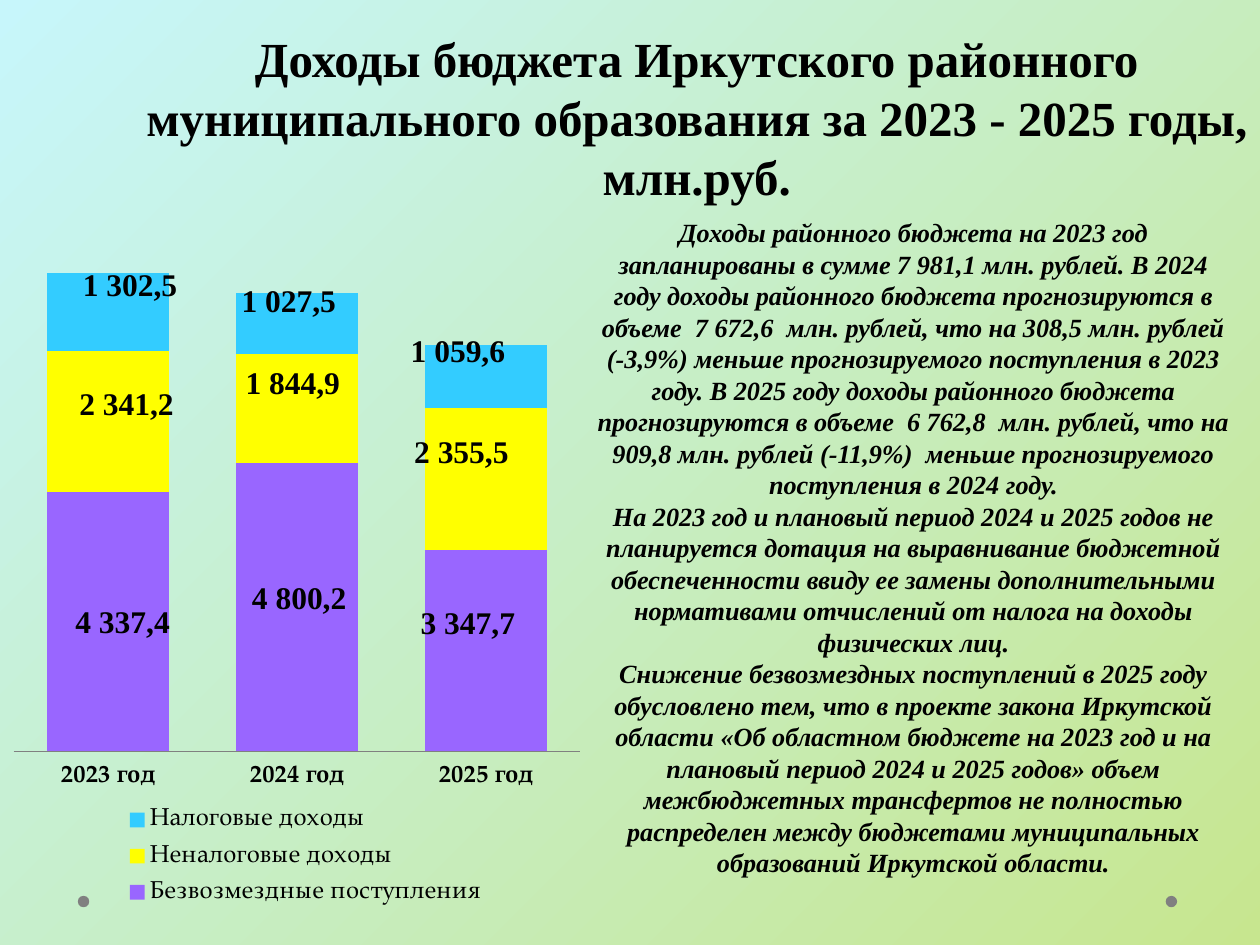
"""Build a slide on district budget revenues with a stacked column chart."""
from lxml.etree import SubElement
from pptx import Presentation
from pptx.chart.data import CategoryChartData
from pptx.dml.color import RGBColor
from pptx.enum.chart import XL_CHART_TYPE, XL_LEGEND_POSITION, XL_TICK_LABEL_POSITION, XL_TICK_MARK
from pptx.enum.shapes import MSO_SHAPE
from pptx.enum.text import MSO_ANCHOR, PP_ALIGN
from pptx.oxml.ns import qn
from pptx.util import Cm, Pt

BLACK = RGBColor(0x00, 0x00, 0x00)
GRAY = RGBColor(0x80, 0x80, 0x80)
PURPLE = RGBColor(0x99, 0x66, 0xFF)
YELLOW = RGBColor(0xFF, 0xFF, 0x00)
BLUE = RGBColor(0x33, 0xCC, 0xFF)
BACKGROUND = [RGBColor(0xC7, 0xF6, 0xFB), RGBColor(0xC7, 0xE6, 0x8F)]
TEXT_FONT = "Times New Roman"
CHART_FONT = "TeX Gyre Pagella"

TITLE = "Доходы бюджета Иркутского районного муниципального образования за 2023 - 2025 годы, млн.руб."
COMMENTS = [
    "Доходы районного бюджета на 2023 год запланированы в сумме 7 981,1 млн. рублей. "
    "В 2024 году доходы районного бюджета прогнозируются в объеме  7 672,6  млн. рублей, "
    "что на 308,5 млн. рублей (-3,9%) меньше прогнозируемого поступления в 2023 году. "
    "В 2025 году доходы районного бюджета прогнозируются в объеме  6 762,8  млн. рублей, "
    "что на 909,8 млн. рублей (-11,9%)  меньше прогнозируемого поступления в 2024 году.",
    "На 2023 год и плановый период 2024 и 2025 годов не планируется дотация на выравнивание "
    "бюджетной обеспеченности ввиду ее замены дополнительными нормативами отчислений "
    "от налога на доходы физических лиц.",
    "Снижение безвозмездных поступлений в 2025 году обусловлено тем, что в проекте закона "
    "Иркутской области «Об областном бюджете на 2023 год и на плановый период 2024 и 2025 годов» "
    "объем межбюджетных трансфертов не полностью распределен между бюджетами муниципальных "
    "образований Иркутской области.",
]
YEARS = ["2023 год", "2024 год", "2025 год"]
SERIES = [
    ("Безвозмездные поступления", (90, 100, 70), PURPLE),
    ("Неналоговые доходы", (49, 38, 49), YELLOW),
    ("Налоговые доходы", (27, 21, 22), BLUE),
]
AMOUNTS = [
    ("4 337,4", 1.27, 12.01), ("4 800,2", 4.83, 11.53), ("3 347,7", 8.23, 12.04),
    ("2 341,2", 1.35, 7.62), ("1 844,9", 4.7, 7.19), ("2 355,5", 8.1, 8.59),
    ("1 302,5", 1.42, 5.21), ("1 027,5", 4.62, 5.54), ("1 059,6", 8.03, 6.55),
]
DOT_LEFTS = (1.57, 23.5)


def set_font(font, name, size, bold=False, italic=False):
    font.name, font.size, font.bold, font.italic = name, Pt(size), bold, italic
    font.color.rgb = BLACK


def add_text(slide, box, paragraphs, size, align=PP_ALIGN.LEFT, anchor=MSO_ANCHOR.TOP, italic=False):
    text_frame = slide.shapes.add_textbox(*map(Cm, box)).text_frame
    text_frame.word_wrap = True
    text_frame.vertical_anchor = anchor
    text_frame.text = "\n".join(paragraphs)
    for paragraph in text_frame.paragraphs:
        paragraph.alignment = align
        for run in paragraph.runs:
            set_font(run.font, TEXT_FONT, size, True, italic)


def set_layout(parent, position, inner=False):
    for old_layout in parent.findall(qn("c:layout")):
        parent.remove(old_layout)
    layout = SubElement(parent, qn("c:layout"))
    manual = SubElement(layout, qn("c:manualLayout"))
    settings = [("layoutTarget", "inner")] if inner else []
    settings += [("xMode", "edge"), ("yMode", "edge"), *zip("xywh", position)]
    for name, value in settings:
        SubElement(manual, qn(f"c:{name}")).set("val", str(value))
    return layout


def add_revenue_chart(slide):
    data = CategoryChartData()
    data.categories = YEARS
    for name, values, _ in SERIES:
        data.add_series(name, values)
    box = map(Cm, (-0.08, 3.53, 11.79, 15.09))
    chart = slide.shapes.add_chart(XL_CHART_TYPE.COLUMN_STACKED, *box, data).chart
    set_font(chart.font, CHART_FONT, 10)
    chart.has_title = False

    plot = chart.plots[0]
    plot.gap_width, plot.overlap, plot.vary_by_categories = 55, 100, False
    for series, (_, _, color) in zip(plot.series, SERIES):
        series.format.fill.solid()
        series.format.fill.fore_color.rgb = color

    axis = chart.category_axis
    axis.major_tick_mark = XL_TICK_MARK.NONE
    axis.tick_label_position = XL_TICK_LABEL_POSITION.LOW
    axis.format.line.color.rgb = GRAY
    set_font(axis.tick_labels.font, CHART_FONT, 14, True)
    chart.value_axis.visible = False
    chart.value_axis.has_major_gridlines = False
    chart.value_axis.minimum_scale, chart.value_axis.maximum_scale = 0, 187

    chart.has_legend = True
    legend = chart.legend
    legend.position = XL_LEGEND_POSITION.RIGHT
    legend.include_in_layout = False
    set_font(legend.font, CHART_FONT, 14)
    chart_element = chart.element.find(qn("c:chart"))
    plot_area = chart_element.find(qn("c:plotArea"))
    plot_area.insert(0, set_layout(plot_area, (0.03, 0.05, 0.97, 0.72), True))
    legend_element = chart_element.find(qn("c:legend"))
    legend_element.insert(1, set_layout(legend_element, (0.14, 0.83, 0.78, 0.16)))


def main():
    presentation = Presentation()
    presentation.slide_width, presentation.slide_height = Cm(25.4), Cm(19.05)
    slide = presentation.slides.add_slide(presentation.slide_layouts[6])
    background = slide.background.fill
    background.gradient()
    background.gradient_angle = 315
    for stop, color in zip(background.gradient_stops, BACKGROUND):
        stop.color.rgb = color

    for left in DOT_LEFTS:
        dot = slide.shapes.add_shape(MSO_SHAPE.OVAL, Cm(left), Cm(18.06), Cm(0.23), Cm(0.23))
        dot.shadow.inherit = False
        dot.fill.solid()
        dot.fill.fore_color.rgb = GRAY
        dot.line.fill.background()

    add_revenue_chart(slide)
    add_text(slide, (2.69, 1.52, 22.71, 2.74), [TITLE], 28, PP_ALIGN.CENTER, MSO_ANCHOR.BOTTOM)
    add_text(slide, (11.71, 4.24, 13.41, 13.72), COMMENTS, 15, PP_ALIGN.CENTER, italic=True)
    for amount, left, top in AMOUNTS:
        add_text(slide, (left, top, 2.9, 1.02), [amount], 18)
    presentation.save("out.pptx")


if __name__ == "__main__":
    main()
